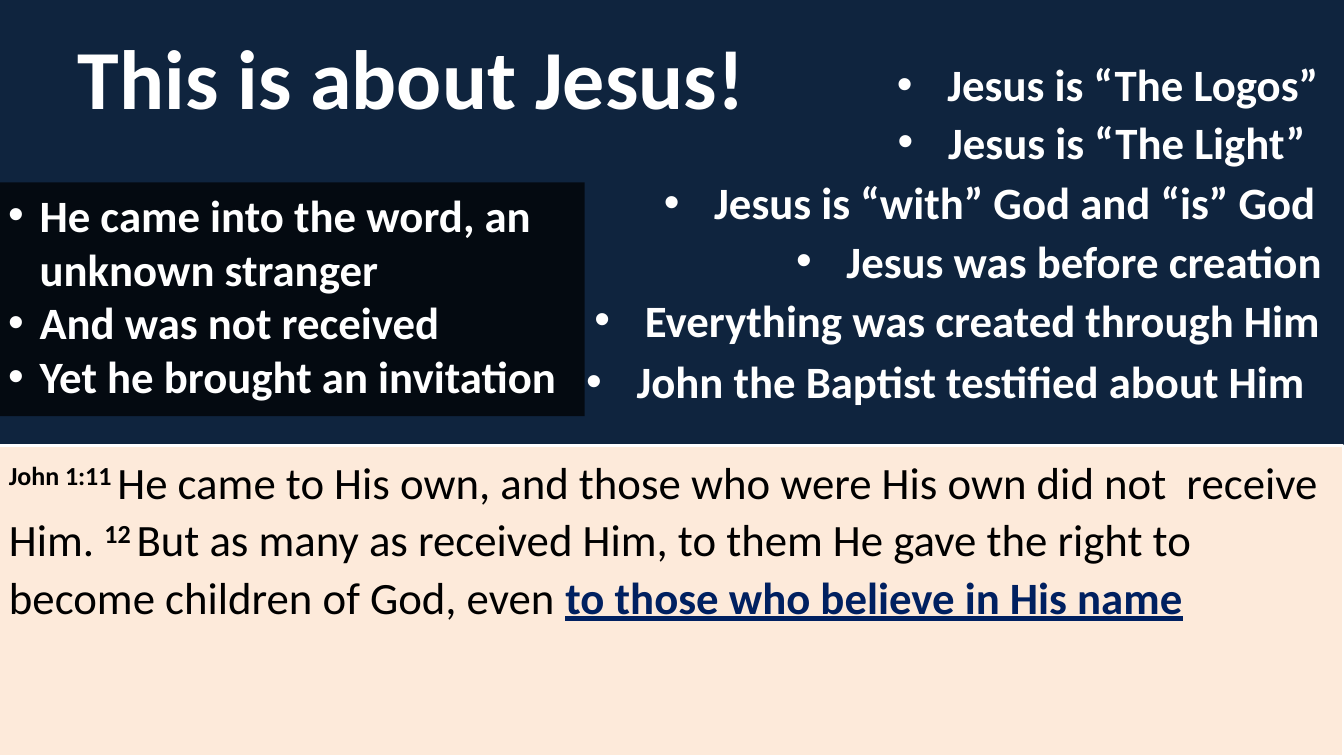
"""Build a Bible study slide about John 1:11-12."""
from dataclasses import dataclass

from lxml.etree import SubElement
from pptx import Presentation
from pptx.dml.color import RGBColor
from pptx.enum.shapes import MSO_SHAPE
from pptx.enum.text import MSO_ANCHOR, MSO_AUTO_SIZE, PP_ALIGN
from pptx.oxml.ns import qn
from pptx.util import Pt


@dataclass(frozen=True)
class Theme:
    """Hold the colours, font and type sizes of the slide."""
    font: str = "Calibri"
    title_size: int = 60
    text_size: int = 32
    night: str = "0F243E"
    cream: str = "FDEADA"
    white: str = "FFFFFF"
    black: str = "000000"
    navy: str = "002060"


POINTS = [
    ("Jesus is “The Logos”", 630, 24, 331),
    ("Jesus is “The Light”", 630.5, 65, 331),
    ("Jesus is “with” God and “is” God", 463.5, 108, 493),
    ("Jesus was before creation", 558, 150, 493),
    ("Everything was created through Him", 414, 192, 548),
    ("John the Baptist testified about Him", 408, 236, 553),
]
SUMMARY = [
    "He came into the word, an unknown stranger",
    "And was not received",
    "Yet he brought an invitation",
]
VERSE_NUMBER = {"bold": True, "raised": True}
PASSAGE = [
    ("John 1:11 ", VERSE_NUMBER),
    ("He came to His own, and those who were His own did not  receive Him. ", {}),
    ("12 ", VERSE_NUMBER),
    ("But as many as received Him, to them He gave the right to become "
     "children of God, even ", {}),
    ("to those who believe in His name",
     {"bold": True, "underline": True, "color": Theme.navy}),
]


def add_span(para, text, *, size=Theme.text_size, color=Theme.white,
             bold=False, underline=None, raised=False):
    """Add a formatted run of text to a paragraph."""
    span = para.add_run()
    span.text = text
    span.font.name = Theme.font
    span.font.size = Pt(size)
    span.font.bold = bold
    span.font.underline = underline
    span.font.color.rgb = RGBColor.from_string(color)
    if raised:
        span.font._element.set("baseline", "30000")


def set_bullet(para, indent):
    """Give a paragraph a round bullet with a hanging indent in points."""
    para.alignment = PP_ALIGN.LEFT
    para.space_before = Pt(0)
    properties = para._p.get_or_add_pPr()
    properties.set("marL", str(Pt(indent)))
    properties.set("indent", str(-Pt(indent)))
    SubElement(properties, qn("a:buFont"), typeface="Arial")
    SubElement(properties, qn("a:buChar"), char="•")


class SlideBuilder:
    """Draw the elements of one page in the given theme."""

    def __init__(self, page, theme):
        """Keep the page and theme, and paint the background."""
        self.page = page
        self.theme = theme
        self.fill(page.background.fill, theme.night)

    def fill(self, fill, color):
        """Paint a fill in one solid colour."""
        fill.solid()
        fill.fore_color.rgb = RGBColor.from_string(color)

    def place(self, box, left, top, width, height, anchor):
        """Position a box in points and return its text frame."""
        box.left, box.top = Pt(left), Pt(top)
        box.width, box.height = Pt(width), Pt(height)
        frame = box.text_frame
        frame.word_wrap = True
        frame.auto_size = MSO_AUTO_SIZE.NONE
        frame.vertical_anchor = anchor
        return frame

    def title(self, text, *area):
        """Fill the title placeholder."""
        frame = self.place(self.page.shapes.title, *area, MSO_ANCHOR.MIDDLE)
        para = frame.paragraphs[0]
        para.alignment = PP_ALIGN.CENTER
        add_span(para, text, size=self.theme.title_size, bold=True)

    def summary(self, lines, *area):
        """Fill the body placeholder with a bulleted list on a dark panel."""
        box = self.page.placeholders[1]
        frame = self.place(box, *area, MSO_ANCHOR.TOP)
        self.fill(box.fill, self.theme.black)
        tint = box.fill._xPr.find(qn("a:solidFill"))[0]
        SubElement(tint, qn("a:alpha"), val="71000")
        for index, line in enumerate(lines):
            para = frame.add_paragraph() if index else frame.paragraphs[0]
            set_bullet(para, 22.5)
            add_span(para, line, bold=True)

    def point(self, text, left, top, width):
        """Add one bulleted statement in a clear callout."""
        box = self.page.shapes.add_shape(
            MSO_SHAPE.ROUNDED_RECTANGULAR_CALLOUT, 0, 0, 0, 0)
        for index, value in enumerate((-0.22, 0.5, 0.17)):
            box.adjustments[index] = value
        box.shadow.inherit = False
        box.fill.background()
        box.line.fill.background()
        frame = self.place(box, left, top, width, 72, MSO_ANCHOR.MIDDLE)
        set_bullet(frame.paragraphs[0], 36)
        add_span(frame.paragraphs[0], text, bold=True)

    def passage(self, spans, *area):
        """Add the scripture panel."""
        box = self.page.shapes.add_shape(MSO_SHAPE.RECTANGLE, 0, 0, 0, 0)
        box.shadow.inherit = False
        self.fill(box.fill, self.theme.cream)
        self.fill(box.line.fill, self.theme.white)
        box.line.width = Pt(1.5)
        para = self.place(box, *area, MSO_ANCHOR.TOP).paragraphs[0]
        para.alignment = PP_ALIGN.LEFT
        para.line_spacing = 1.07
        para.space_after = Pt(8)
        for text, style in spans:
            add_span(para, text, **{"color": self.theme.black, **style})


def main():
    """Create the deck and save it."""
    deck = Presentation()
    deck.slide_width, deck.slide_height = Pt(960), Pt(540)
    page = deck.slides.add_slide(deck.slide_layouts[1])
    builder = SlideBuilder(page, Theme())
    builder.passage(PASSAGE, -0.72, 318.24, 960, 221.76)
    builder.title("This is about Jesus!", 12, 18, 564, 72)
    for statement in POINTS:
        builder.point(*statement)
    builder.summary(SUMMARY, -1.44, 130.32, 419, 167)
    deck.save("out.pptx")


if __name__ == "__main__":
    main()
